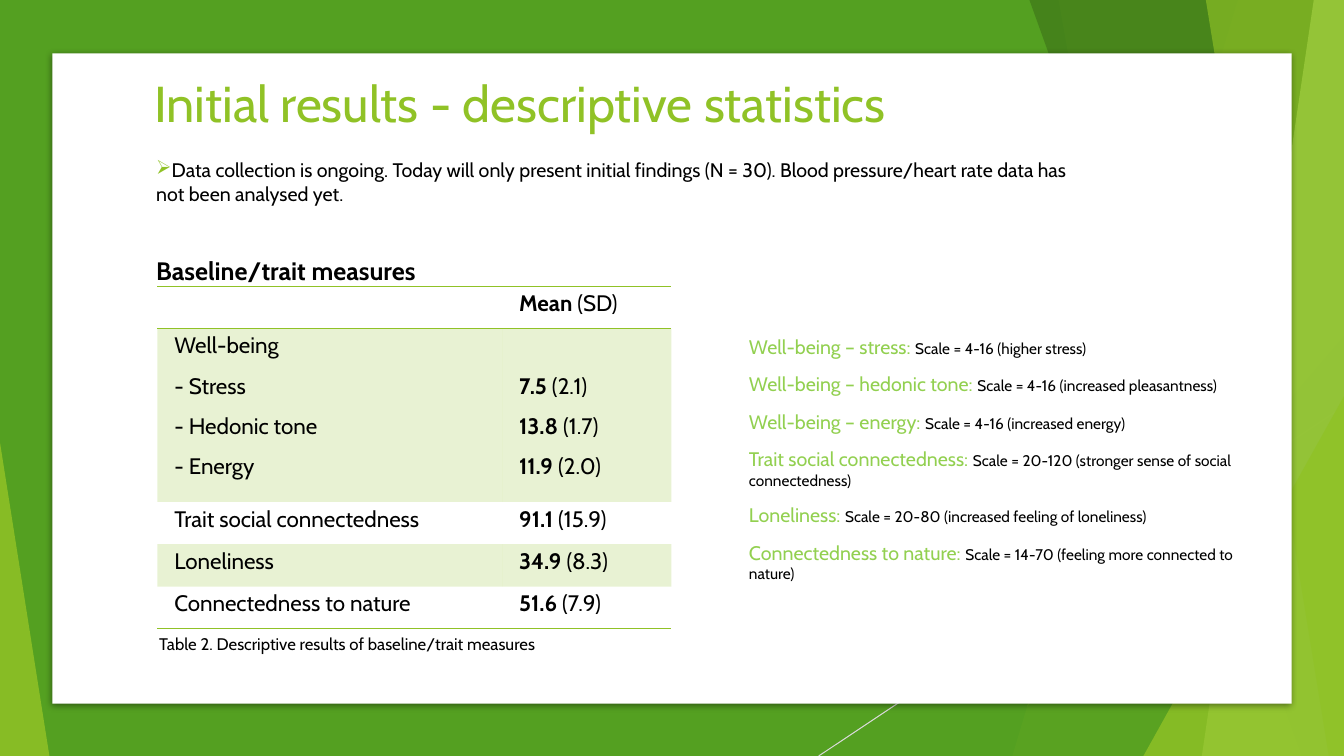
import dataclasses

import pptx
import pptx.dml.color
import pptx.enum.shapes
import pptx.enum.text
import pptx.oxml
import pptx.oxml.ns
import pptx.util
from pptx.util import Inches

SHAPES = pptx.enum.shapes.MSO_SHAPE
qn = pptx.oxml.ns.qn


@dataclasses.dataclass(frozen=True)
class Theme:
    font: str = "Cabin"
    green: str = "54A021"
    lime: str = "90C226"
    dark: str = "3F7819"
    pale: str = "C0E474"
    label: str = "92D050"
    rule: str = "D9D9D9"
    white: str = "FFFFFF"
    black: str = "000000"
    title: int = 36
    heading: int = 18
    table: int = 16
    body: int = 14
    caption: int = 12
    scale: int = 11


THEME = Theme()
NO_STYLE = "{2D5ABB26-0587-4C30-8999-92F81FD0307C}"

# Each table row: height, left lines, (mean, SD) lines, shaded
MEASURES = [
    (1.72, ["Well-being", "- Stress", "- Hedonic tone", "- Energy"],
     [("7.5", " (2.1)"), ("13.8", " (1.7)"), ("11.9", " (2.0)")], True),
    (0.42, ["Trait social connectedness"], [("91.1", " (15.9)")], False),
    (0.42, ["Loneliness"], [("34.9", " (8.3)")], True),
    (0.42, ["Connectedness to nature"], [("51.6", " (7.9)")], False),
]
SCALES = [
    ("Well-being – stress: ", "Scale = 4-16 (higher stress)"),
    ("Well-being – hedonic tone: ", "Scale = 4-16 (increased pleasantness)"),
    ("Well-being – energy: ", "Scale = 4-16 (increased energy)"),
    ("Trait social connectedness: ", "Scale = 20-120 (stronger sense of social connectedness)"),
    ("Loneliness: ", "Scale = 20-80 (increased feeling of loneliness)"),
    ("Connectedness to nature: ", "Scale = 14-70 (feeling more connected to nature)"),
]


def rgb(value):
    return pptx.dml.color.RGBColor.from_string(value)


def add_xml(parent, markup, index=None):
    node = pptx.oxml.parse_xml(markup.replace(">", f' {pptx.oxml.ns.nsdecls("a")}>', 1)
                               if "/>" not in markup.split(">", 1)[0] + ">"
                               else markup.replace("/>", f' {pptx.oxml.ns.nsdecls("a")}/>', 1))
    parent.insert(len(parent) if index is None else index, node)


def paint(fill, element, color, opacity=100):
    fill.solid()
    fill.fore_color.rgb = rgb(color)
    if opacity < 100:
        add_xml(next(element.iter(qn("a:srgbClr"))), f'<a:alpha val="{opacity * 1000}"/>')


def finish_shape(shape, color, opacity=100):
    shape.shadow.inherit = False
    shape.line.fill.background()
    paint(shape.fill, shape.element, color, opacity)
    return shape


def add_block(page, kind, left, top, width, height, color, opacity=100, apex=None):
    shape = page.shapes.add_shape(kind, Inches(left), Inches(top), Inches(width), Inches(height))
    if apex is not None:
        shape.adjustments[0] = apex
    return finish_shape(shape, color, opacity)


def add_facet(page, top_left, bottom_left, color, opacity):
    """A slanted band that runs to the right edge of the page."""
    builder = page.shapes.build_freeform(Inches(top_left), 0)
    builder.add_line_segments([(Inches(13.33), 0), (Inches(13.33), Inches(7.5)),
                               (Inches(bottom_left), Inches(7.5))], close=True)
    finish_shape(builder.convert_to_shape(), color, opacity)


def add_span(para, text, size=THEME.body, color=THEME.black, bold=False):
    span = para.add_run()
    span.text = text
    span.font.name = THEME.font
    span.font.size = pptx.util.Pt(size)
    span.font.color.rgb = rgb(color)
    span.font.bold = bold


def next_para(frame, position):
    return frame.paragraphs[0] if position == 0 else frame.add_paragraph()


def add_box(page, left, top, width, height):
    box = page.shapes.add_textbox(Inches(left), Inches(top), Inches(width), Inches(height))
    box.text_frame.word_wrap = True
    return box.text_frame


def add_background(page):
    add_block(page, SHAPES.RECTANGLE, 0, 0, 13.33, 7.5, THEME.green)
    line = page.shapes.add_connector(pptx.enum.shapes.MSO_CONNECTOR.STRAIGHT,
                                     Inches(13.33), Inches(4.03), Inches(8.12), Inches(7.5))
    line.line.color.rgb = rgb(THEME.rule)
    line.line.width = pptx.util.Pt(0.75)
    add_xml(line.element.spPr, "<a:effectLst/>")
    add_facet(page, 12.28, 10.04, THEME.lime, 30)
    add_facet(page, 10.5, 11.83, THEME.lime, 20)
    add_block(page, SHAPES.ISOSCELES_TRIANGLE, 9.77, 3.33, 3.56, 4.17, THEME.green, 72, 1)
    add_facet(page, 10.21, 12.91, THEME.dark, 70)
    add_facet(page, 13.03, 11.92, THEME.pale, 70)
    add_facet(page, 11.96, 13.18, THEME.lime, 65)
    add_block(page, SHAPES.ISOSCELES_TRIANGLE, 11.34, 3.93, 1.99, 3.57, THEME.lime, 80, 1)
    add_block(page, SHAPES.ISOSCELES_TRIANGLE, 0, 4.39, 0.49, 3.11, THEME.lime, 85, 0)
    # White card with a soft shadow
    card = add_block(page, SHAPES.RECTANGLE, 0.52, 0.53, 12.29, 6.45, THEME.white)
    add_xml(card.element.spPr.find(qn("a:effectLst")),
            '<a:outerShdw blurRad="63500" dist="17780" dir="5400000">'
            f'<a:srgbClr val="{THEME.black}"><a:alpha val="43000"/></a:srgbClr></a:outerShdw>')


def add_title(page, text):
    title = page.shapes.title
    title.left, title.top = Inches(1.43), Inches(0.67)
    title.width, title.height = Inches(9.4), Inches(1.44)
    frame = title.text_frame
    frame.auto_size = pptx.enum.text.MSO_AUTO_SIZE.NONE
    frame.vertical_anchor = pptx.enum.text.MSO_ANCHOR.TOP
    frame.paragraphs[0].alignment = pptx.enum.text.PP_ALIGN.LEFT
    add_span(frame.paragraphs[0], text, size=THEME.title, color=THEME.lime)
    title.element.getparent().append(title.element)  # in front of the card


def fill_cell(cell, lines, shaded=False, borders=(), top=0.02):
    cell.margin_left = cell.margin_right = Inches(0.17)
    cell.margin_top, cell.margin_bottom = Inches(top), 0
    for position, spans in enumerate(lines):
        para = next_para(cell.text_frame, position)
        para.line_spacing = 1.07
        para.space_after = pptx.util.Pt(8)
        for text, bold in spans:
            add_span(para, text, size=THEME.table, bold=bold)
    properties = cell._tc.get_or_add_tcPr()
    if shaded:
        paint(cell.fill, properties, THEME.lime, 20)
    else:
        cell.fill.background()
    for index, side in enumerate(borders):
        add_xml(properties, f'<a:{side} w="12700"><a:solidFill><a:srgbClr val="{THEME.lime}"/>'
                            f'</a:solidFill></a:{side}>', index)


def add_measures(page):
    holder = page.shapes.add_table(len(MEASURES) + 1, 2, Inches(1.56), Inches(2.84),
                                   Inches(5.1), Inches(3.4))
    table = holder.table
    table.first_row = table.horz_banding = False
    table._tbl.tblPr.find(qn("a:tableStyleId")).text = NO_STYLE
    table.columns[0].width, table.columns[1].width = Inches(3.42), Inches(1.68)
    table.rows[0].height = Inches(0.42)
    fill_cell(table.cell(0, 0), [], borders=("lnT", "lnB"))
    fill_cell(table.cell(0, 1), [[("Mean", True), (" (SD)", False)]], borders=("lnT", "lnB"))
    for row, (height, names, values, shaded) in enumerate(MEASURES, 1):
        table.rows[row].height = Inches(height)
        borders = ("lnB",) if row == len(MEASURES) else ()
        fill_cell(table.cell(row, 0), [[(name, False)] for name in names], shaded, borders)
        # Values line up with the last names of the row
        fill_cell(table.cell(row, 1), [[(mean, True), (spread, False)] for mean, spread in values],
                  shaded, borders, top=0.02 + 0.4 * (len(names) - len(values)))


def add_scales(page):
    frame = add_box(page, 7.33, 3.27, 5.21, 2.82)
    for position, (label, scale) in enumerate(SCALES):
        para = next_para(frame, position)
        para.space_before = pptx.util.Pt(10 if position else 0)
        add_span(para, label, color=THEME.label)
        add_span(para, scale, size=THEME.scale)


def main():
    deck = pptx.Presentation()
    deck.slide_width, deck.slide_height = Inches(13.33), Inches(7.5)
    page = deck.slides.add_slide(deck.slide_layouts.get_by_name("Title Only"))
    add_background(page)
    add_measures(page)
    add_title(page, "Initial results - descriptive statistics")
    # Introduction with an arrow bullet
    para = add_box(page, 1.45, 1.52, 9.52, 0.57).paragraphs[0]
    add_span(para, "Data collection is ongoing. Today will only present initial findings (N = 30). "
                   "Blood pressure/heart rate data has not been analysed yet.")
    properties = para._p.get_or_add_pPr()
    add_xml(properties, f'<a:buClr><a:srgbClr val="{THEME.lime}"/></a:buClr>')
    add_xml(properties, '<a:buChar char="➢"/>')
    # Table heading, scales and caption
    add_span(add_box(page, 1.45, 2.48, 5.95, 0.4).paragraphs[0], "Baseline/trait measures",
             size=THEME.heading, bold=True)
    add_scales(page)
    add_span(add_box(page, 1.48, 6.24, 5.34, 0.3).paragraphs[0],
             "Table 2. Descriptive results of baseline/trait measures", size=THEME.caption)
    deck.save("out.pptx")


if __name__ == "__main__":
    main()
